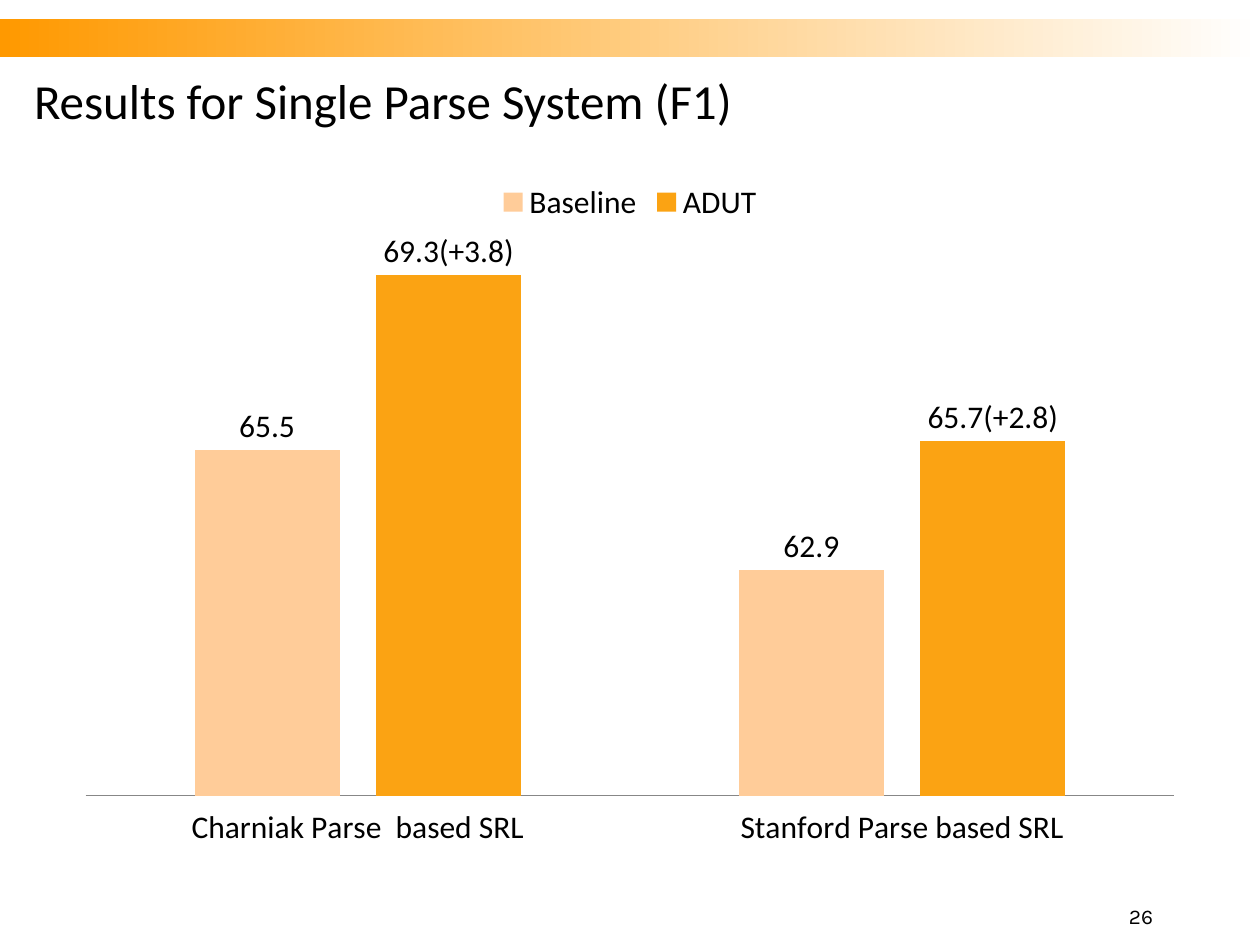
from lxml import etree
from pptx import Presentation
from pptx.chart.data import CategoryChartData
from pptx.dml.color import RGBColor
from pptx.enum.chart import (XL_CHART_TYPE, XL_LABEL_POSITION,
                             XL_LEGEND_POSITION, XL_TICK_LABEL_POSITION,
                             XL_TICK_MARK)
from pptx.enum.shapes import MSO_SHAPE
from pptx.enum.text import MSO_ANCHOR, PP_ALIGN
from pptx.oxml.ns import qn
from pptx.util import Inches, Pt

COLUMN = XL_CHART_TYPE.COLUMN_CLUSTERED
ABOVE = XL_LABEL_POSITION.OUTSIDE_END
TOP = XL_LEGEND_POSITION.TOP
LOW = XL_TICK_LABEL_POSITION.LOW
NO_TICK = XL_TICK_MARK.NONE
RECT = MSO_SHAPE.RECTANGLE
MIDDLE, BOTTOM = MSO_ANCHOR.MIDDLE, MSO_ANCHOR.BOTTOM
LEFT, RIGHT = PP_ALIGN.LEFT, PP_ALIGN.RIGHT

BLACK = RGBColor(0x00, 0x00, 0x00)
WHITE = RGBColor(0xFF, 0xFF, 0xFF)
GRAY = RGBColor(0x87, 0x87, 0x87)
ORANGE = RGBColor(0xFF, 0x99, 0x00)
PEACH = RGBColor(0xFF, 0xCC, 0x99)
AMBER = RGBColor(0xFB, 0xA3, 0x13)

WIDTH, HEIGHT = 10, 7.5
CATS = ["Charniak Parse  based SRL", "Stanford Parse based SRL"]
# Name, values, colour and labels that replace the plain values
SERIES = [
    ("Baseline", [65.5, 62.9], PEACH, []),
    ("ADUT", [69.3, 65.7], AMBER, ["69.3(+3.8)", "65.7(+2.8)"]),
]
# Inner plot area as shares of the chart's size
PLOT = {"x": 0.02, "y": 0.11, "w": 0.96, "h": 0.81}


def place(shape, x, y, w, h):
    shape.left, shape.top = Inches(x), Inches(y)
    shape.width, shape.height = Inches(w), Inches(h)


def style(font, size=18, name="Calibri", color=BLACK):
    font.size, font.name, font.bold = Pt(size), name, False
    font.color.rgb = color


def write(frame, text, align=LEFT, anchor=MIDDLE, **look):
    frame.word_wrap = True
    frame.vertical_anchor = anchor
    para = frame.paragraphs[0]
    para.alignment = align
    run = para.add_run()
    run.text = text
    style(run.font, **look)


def add_band(slide):
    band = slide.shapes.add_shape(RECT, 0, 0, 0, 0)
    place(band, 0, 0.02 * HEIGHT, WIDTH, 0.04 * HEIGHT)
    band.shadow.inherit = False
    band.line.fill.background()
    band.fill.gradient()
    band.fill.gradient_angle = 0
    for stop, color in zip(band.fill.gradient_stops, (ORANGE, WHITE)):
        stop.color.rgb = color


def set_plot(chart):
    """Fix the inner plot area within the chart."""
    area = chart._chartSpace.chart.plotArea
    for old in area.findall(qn("c:layout")):
        area.remove(old)
    layout = etree.Element(qn("c:layout"))
    area.insert(0, layout)
    manual = etree.SubElement(layout, qn("c:manualLayout"))
    rules = {"layoutTarget": "inner", "xMode": "edge", "yMode": "edge", **PLOT}
    for tag, val in rules.items():
        etree.SubElement(manual, qn("c:" + tag)).set("val", str(val))


def set_axes(chart):
    cat, val = chart.category_axis, chart.value_axis
    cat.major_tick_mark = cat.minor_tick_mark = NO_TICK
    cat.tick_label_position = LOW
    cat.has_major_gridlines = False
    cat.format.line.color.rgb = GRAY
    cat.format.line.width = Pt(0.75)
    val.minimum_scale, val.maximum_scale = 58, 70
    val.has_major_gridlines = False
    val.visible = False


def set_bars(plot):
    plot.gap_width, plot.overlap = 150, -25
    plot.vary_by_categories = False
    for series, (_, _, color, notes) in zip(plot.series, SERIES):
        series.format.fill.solid()
        series.format.fill.fore_color.rgb = color
        series.invert_if_negative = False
        labels = series.data_labels
        labels.show_value = True
        labels.position = ABOVE
        style(labels.font)
        for i, note in enumerate(notes):
            label = series.points[i].data_label
            run = label.text_frame.paragraphs[0].add_run()
            run.text = note
            style(run.font)
            label.position = ABOVE


def add_bars(slide, x, y, w, h):
    data = CategoryChartData(number_format="0.0")
    data.categories = CATS
    for name, vals, _, _ in SERIES:
        data.add_series(name, vals)
    box = [Inches(n) for n in (x, y, w, h)]
    chart = slide.shapes.add_chart(COLUMN, *box, data).chart
    style(chart.font)
    chart.has_title = False
    chart.has_legend = True
    chart.legend.position = TOP
    chart.legend.include_in_layout = False
    set_plot(chart)
    set_axes(chart)
    set_bars(chart.plots[0])


def main():
    deck = Presentation()
    deck.slide_width, deck.slide_height = Inches(WIDTH), Inches(HEIGHT)
    slide = deck.slides.add_slide(deck.slide_layouts[5])

    # Band and title
    add_band(slide)
    title = slide.shapes.title
    place(title, 0.17, 0.5, 0.9 * WIDTH, 0.58)
    write(title.text_frame, "Results for Single Parse System (F1)", size=28)

    # Scores
    add_bars(slide, 0.05 * WIDTH, 1.33, 0.9 * WIDTH, 5.42)

    # Page number
    page = slide.shapes.add_textbox(0, 0, 0, 0)
    place(page, 8.25, 7.17, 0.1 * WIDTH, 0.25)
    write(page.text_frame, "26", align=RIGHT, anchor=BOTTOM,
          size=12, name="Karla")

    deck.save("out.pptx")


if __name__ == "__main__":
    main()
